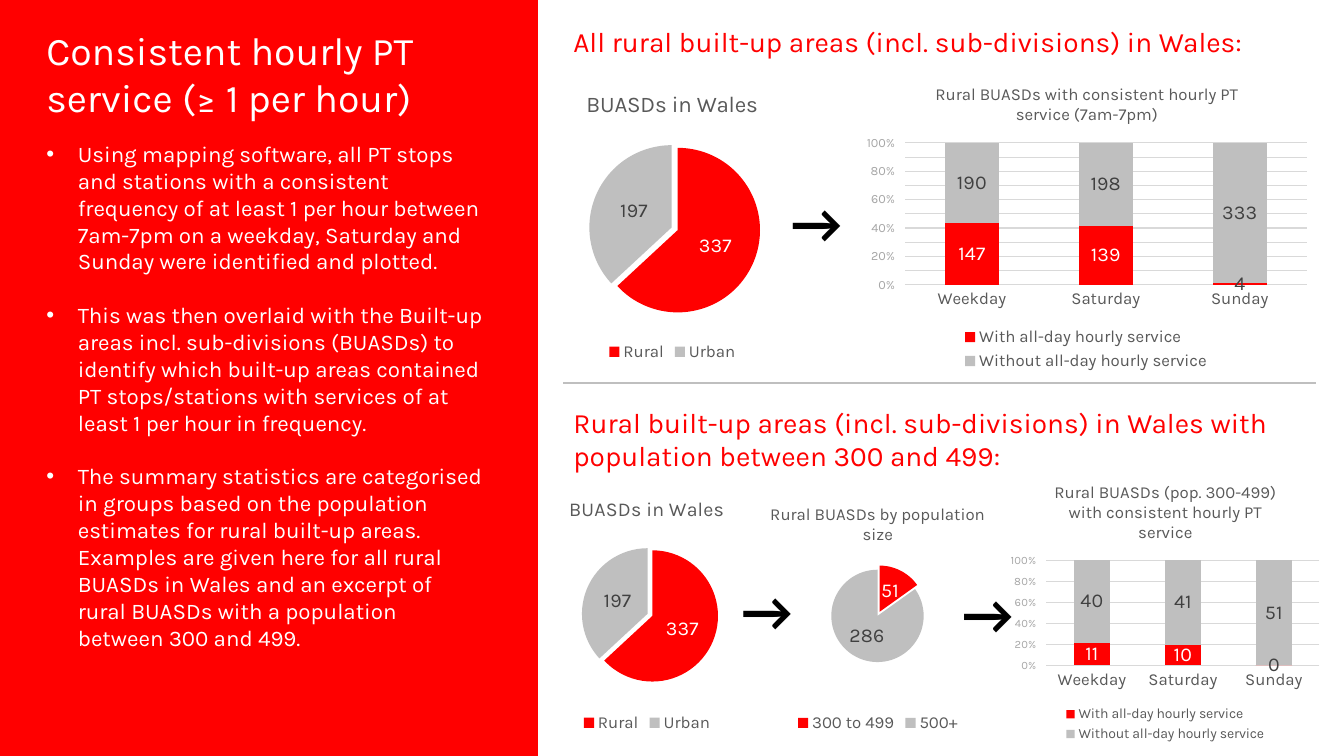
from lxml import etree
from pptx import Presentation
from pptx.chart.data import CategoryChartData
from pptx.dml.color import RGBColor
from pptx.enum.chart import XL_CHART_TYPE as CT, XL_LABEL_POSITION as POS
from pptx.enum.chart import XL_LEGEND_POSITION as LEG, XL_TICK_MARK as TICK
from pptx.enum.shapes import MSO_CONNECTOR, MSO_SHAPE
from pptx.enum.text import MSO_AUTO_SIZE, PP_ALIGN
from pptx.oxml import parse_xml
from pptx.oxml.ns import nsdecls, qn
from pptx.util import Pt

RED, SILVER, WHITE, BLACK = "FF0000", "BFBFBF", "FFFFFF", "000000"
TEXT, DARK, AXIS, GRID = "595959", "404040", "A6A6A6", "D9D9D9"


def rgb(value):
    return RGBColor.from_string(value)


class Deck:
    font = "Karla"

    def __init__(self, slide):
        self.s = slide

    def style(self, font, size, color, bold=False, name=None):
        font.name, font.size, font.bold = name or self.font, Pt(size), bold
        font.color.rgb = rgb(color)

    def panel(self, x, y, w, h, color):
        sp = self.s.shapes.add_shape(MSO_SHAPE.RECTANGLE, Pt(x), Pt(y), Pt(w), Pt(h))
        sp.shadow.inherit = False
        sp.fill.solid()
        sp.fill.fore_color.rgb = sp.line.color.rgb = rgb(color)
        sp.line.width = Pt(1)

    def text(self, x, y, w, h, paragraphs, size, color, bullets=False, gap=0,
             align=None, bold=False, name=None):
        tf = self.s.shapes.add_textbox(Pt(x), Pt(y), Pt(w), Pt(h)).text_frame
        tf.word_wrap = True
        tf.auto_size = MSO_AUTO_SIZE.SHAPE_TO_FIT_TEXT
        for i, words in enumerate(paragraphs):
            p = tf.add_paragraph() if i else tf.paragraphs[0]
            if bullets:
                pPr = p._p.get_or_add_pPr()
                pPr.set("marL", str(Pt(22.5)))
                pPr.set("indent", str(-Pt(22.5)))
                pPr.append(parse_xml(f'<a:buFont {nsdecls("a")} typeface="Arial"/>'))
                pPr.append(parse_xml(f'<a:buChar {nsdecls("a")} char="•"/>'))
            if i:
                p.space_before = Pt(gap)
            p.alignment = align
            r = p.add_run()
            r.text = words
            self.style(r.font, size, color, bold, name)

    def arrow(self, x, y):
        self.text(x, y, 59, 55.4, ["→"], 40, BLACK, align=PP_ALIGN.CENTER,
                  bold=True, name="Calibri")

    def rule(self, x1, y, x2):
        line = self.s.shapes.add_connector(MSO_CONNECTOR.STRAIGHT,
                                           Pt(x1), Pt(y), Pt(x2), Pt(y))
        line.line.color.rgb, line.line.width = rgb(SILVER), Pt(1.5)
        etree.SubElement(line._element.spPr, qn("a:effectLst"))

    def layout(self, box, place, inner=False):
        """Manual layout for a place in slide points within a chart box."""
        parts = [("x", (place[0] - box[0]) / box[2]), ("y", (place[1] - box[1]) / box[3])]
        parts += [(k, v / b) for k, v, b in zip("wh", place[2:], box[2:])]
        xml = '<c:layoutTarget val="inner"/>' if inner else ""
        xml += "".join(f'<c:{k}Mode val="edge"/>' for k in "xy")
        xml += "".join(f'<c:{k} val="{v:.4f}"/>' for k, v in parts)
        return parse_xml(f'<c:layout {nsdecls("c")}><c:manualLayout>{xml}'
                         '</c:manualLayout></c:layout>')

    def chart(self, kind, box, cats, series, title, title_size, title_at, plot, legend_size):
        data = CategoryChartData()
        data.categories = cats
        for name, values in series:
            data.add_series(name, values)
        chart = self.s.shapes.add_chart(kind, *map(Pt, box), data).chart
        self.style(chart.font, 10, BLACK)
        # Title and plot placement
        p = chart.chart_title.text_frame.paragraphs[0]
        r = p.add_run()
        r.text = title
        self.style(r.font, title_size, TEXT)
        chart.chart_title.include_in_layout = False
        area = chart._chartSpace.find(".//" + qn("c:plotArea"))
        head = chart._chartSpace.find(".//" + qn("c:title"))
        for parent, index, new in ((head, 1, self.layout(box, title_at)),
                                   (area, 0, self.layout(box, plot, True))):
            for old in parent.findall(qn("c:layout")):
                parent.remove(old)
            parent.insert(index, new)
        # Legend
        chart.has_legend = True
        chart.legend.position = LEG.BOTTOM
        chart.legend.include_in_layout = False
        self.style(chart.legend.font, legend_size, TEXT)
        # Value labels
        for ser in chart.plots[0].series:
            labels = ser.data_labels
            labels.show_value, labels.position = True, POS.CENTER
            self.style(labels.font, 14, DARK)
        return chart

    def white_label(self, point):
        self.style(point.data_label.font, 14, WHITE)
        point.data_label.position = POS.CENTER

    def pie(self, box, cats, values, title, title_size, title_at, center, radius, explosion):
        plot = (center[0] - radius, center[1] - radius, 2 * radius, 2 * radius)
        chart = self.chart(CT.PIE, box, cats, [("Series 1", values)], title,
                           title_size, title_at, plot, 12)
        ser = chart.plots[0].series[0]
        for i, (color, shift) in enumerate(zip((RED, SILVER), explosion)):
            fill = ser.points[i].format.fill
            fill.solid()
            fill.fore_color.rgb = rgb(color)
            dPt = ser._element.findall(qn("c:dPt"))[i]
            dPt.find(qn("c:spPr")).addprevious(
                parse_xml(f'<c:explosion {nsdecls("c")} val="{shift}"/>'))
        self.white_label(ser.points[0])

    def bars(self, box, served, unserved, title, title_at, plot, legend_size, axis_size, unit):
        chart = self.chart(CT.COLUMN_STACKED_100, box, ["Weekday", "Saturday", "Sunday"],
                           [("With all-day hourly service", served),
                            ("Without all-day hourly service", unserved)],
                           title, 12, title_at, plot, legend_size)
        bars = chart.plots[0]
        bars.gap_width, bars.overlap = 150, 100
        for ser, color in zip(bars.series, (RED, SILVER)):
            ser.format.fill.solid()
            ser.format.fill.fore_color.rgb = rgb(color)
        for i in range(2):
            self.white_label(bars.series[0].points[i])
        cat, val = chart.category_axis, chart.value_axis
        cat.major_tick_mark = TICK.NONE
        cat.format.line.color.rgb, cat.format.line.width = rgb(GRID), Pt(0.75)
        self.style(cat.tick_labels.font, 12, TEXT)
        val.minimum_scale, val.maximum_scale, val.major_unit = 0, 1, unit
        val.format.line.fill.background()
        grid = val.major_gridlines.format.line
        grid.color.rgb, grid.width = rgb(GRID), Pt(0.75)
        val.tick_labels.number_format = "0%"
        val.tick_labels.number_format_is_linked = False
        self.style(val.tick_labels.font, axis_size, AXIS)


def main():
    prs = Presentation()
    prs.slide_width, prs.slide_height = Pt(960), Pt(540)
    d = Deck(prs.slides.add_slide(prs.slide_layouts[6]))

    # Red panel with method notes
    d.panel(0.5, 0, 383, 540, RED)
    d.text(26, 15, 327.6, 75, ["Consistent hourly PT service (≥ 1 per hour)"], 28, WHITE)
    d.text(26, 96.5, 327.6, 356.4, [
        "Using mapping software, all PT stops and stations with a consistent frequency of at "
        "least 1 per hour between 7am-7pm on a weekday, Saturday and Sunday were identified "
        "and plotted.",
        "This was then overlaid with the Built-up areas incl. sub-divisions (BUASDs) to "
        "identify which built-up areas contained PT stops/stations with services of at least "
        "1 per hour in frequency.",
        "The summary statistics are categorised in groups based on the population estimates "
        "for rural built-up areas. Examples are given here for all rural BUASDs in Wales and "
        "an excerpt of rural BUASDs with a population between 300 and 499.",
    ], 16, WHITE, bullets=True, gap=19.2)

    # All rural areas
    areas = (["Rural", "Urban"], [337, 197], "BUASDs in Wales")
    d.text(402.5, 14, 520.6, 31.5,
           ["All rural built-up areas (incl. sub-divisions) in Wales:"], 20, RED)
    d.pie((395.3, 53.3, 170, 208), *areas, 16, (416, 61), (482, 163.5), 58.8, (4, 4))
    d.arrow(553.7, 130.3)
    d.bars((612, 49, 327.6, 218.9), [147, 139, 4], [190, 198, 333],
           "Rural BUASDs with consistent hourly PT service (7am-7pm)",
           (666, 57), (646.4, 102.1, 287.1, 101.4), 12, 9, 0.1)

    d.rule(402.5, 273.6, 940.3)

    # Rural areas with population 300 to 499
    d.text(402.5, 285.8, 520.6, 55.4,
           ["Rural built-up areas (incl. sub-divisions) in Wales with population between "
            "300 and 499:"], 20, RED)
    d.pie((517, 350, 220.3, 176.4), ["300 to 499", "500+"], [51, 286],
          "Rural BUASDs by population size", 12, (548, 357), (626.8, 440), 33, (10, 0))
    d.pie((388, 344.9, 148.3, 181.4), *areas, 14, (404, 352), (464.3, 439.3), 46.9, (4, 4))
    d.arrow(518.4, 407.5)
    d.bars((717.8, 333.4, 229, 199.4), [11, 10, 0], [40, 41, 51],
           "Rural BUASDs (pop. 300-499) with consistent hourly PT service",
           (751, 341), (747.5, 400.3, 195, 75), 10, 8, 0.2)
    d.arrow(676, 409.7)

    prs.save("out.pptx")


if __name__ == "__main__":
    main()
